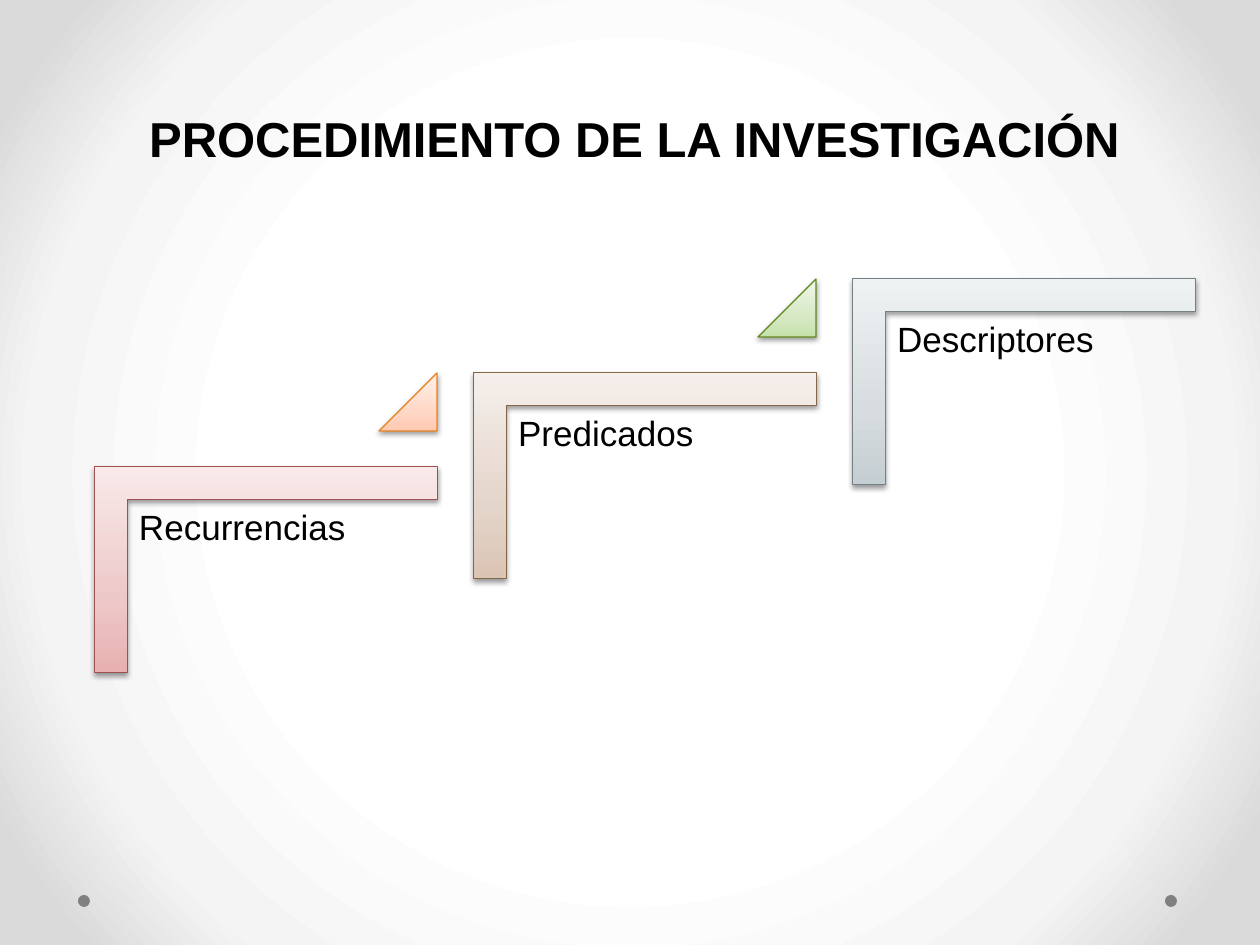
"""Build the slide showing the three rising steps of the research procedure."""
from pptx import Presentation
from pptx.dml.color import RGBColor as RGB
from pptx.enum.shapes import MSO_SHAPE as SHAPE
from pptx.enum.text import MSO_ANCHOR as ANCHOR, PP_ALIGN as ALIGN
from pptx.oxml import parse_xml
from pptx.oxml.ns import nsdecls, qn
from pptx.util import Emu, Pt

COLORS = {
    "text": "000000", "dot": "808080",
    "backdrop": [(50, "FFFFFF"), (76, "F4F4F4"), (92, "DADADA")],
    "corners": [
        ("9C5252", "E8B0B0", "EDC8C8", "F9E9E9"),
        ("846648", "DAC4B4", "E4D5CB", "F5EFEB"),
        ("758085", "C5CED2", "D6DCDF", "EFF2F3"),
    ],
    "triangles": [
        ("E68422", "FFC9B1", "FFD8C8", "FFF0EA"),
        ("63891F", "C5E1AB", "D6E9C5", "EFF7E9"),
    ],
}
LABELS = ["Recurrencias", "Predicados", "Descriptores"]
STEP_X, STEP_Y = 379, -94
SHADOW = (
    f'<a:outerShdw {nsdecls("a")} blurRad="39370" dist="20320" dir="5400000" '
    'rotWithShape="0"><a:srgbClr val="000000"><a:alpha val="38000"/>'
    '</a:srgbClr></a:outerShdw>'
)


def px(*values):
    return [Emu(round(v * 914400 / 126)) for v in values]


def set_gradient(props, stops, direction):
    gs = "".join(
        f'<a:gs pos="{pos * 1000}"><a:srgbClr val="{color}"/></a:gs>'
        for pos, color in stops
    )
    grad = parse_xml(
        f'<a:gradFill {nsdecls("a")} rotWithShape="0">'
        f'<a:gsLst>{gs}</a:gsLst>{direction}</a:gradFill>'
    )
    props.replace(props.find(qn("a:solidFill")), grad)


prs = Presentation()
prs.slide_width, prs.slide_height = px(1260, 945)
s = prs.slides.add_slide(prs.slide_layouts[5])

s.background.fill.solid()
set_gradient(
    s.element.find(".//" + qn("p:bgPr")), COLORS["backdrop"],
    '<a:path path="circle"><a:fillToRect l="50000" t="50000" r="50000" b="50000"/></a:path>',
)

for x in (1165, 78):
    dot = s.shapes.add_shape(SHAPE.OVAL, *px(x, 895, 12, 12))
    dot.shadow.inherit = False
    dot.fill.solid()
    dot.fill.fore_color.rgb = RGB.from_string(COLORS["dot"])
    dot.line.fill.background()

title = s.shapes.title
title.left, title.top, title.width, title.height = px(94, 16, 1081, 158)
tf = title.text_frame
tf.word_wrap = True
tf.vertical_anchor = ANCHOR.BOTTOM
p = tf.paragraphs[0]
p.alignment = ALIGN.CENTER
p.line_spacing = Pt(58)
r = p.add_run()
r.text = "PROCEDIMIENTO DE LA INVESTIGACIÓN"
r.font.name, r.font.size, r.font.bold = "Arial", Pt(28), True
r.font.color.rgb = RGB.from_string(COLORS["text"])

stairs = s.shapes.add_group_shape()
for i, label in enumerate(LABELS):
    dx, dy = i * STEP_X, i * STEP_Y
    corner = stairs.shapes.add_shape(SHAPE.CORNER, *px(163 + dx, 398 + dy, 206, 343))
    corner.rotation = 90
    corner.adjustments[0] = corner.adjustments[1] = 0.16
    parts = [(corner, COLORS["corners"][i])]

    box = stairs.shapes.add_textbox(*px(129 + dx, 500 + dy, 309, 271))
    tf = box.text_frame
    tf.word_wrap = True
    tf.margin_left, tf.margin_top, tf.margin_right, tf.margin_bottom = px(10, 10, 10, 10)
    p = tf.paragraphs[0]
    p.line_spacing = 0.9
    p.space_after = Pt(7)
    r = p.add_run()
    r.text = label
    r.font.name, r.font.size = "Arial", Pt(20)
    r.font.color.rgb = RGB.from_string(COLORS["text"])

    if i < len(COLORS["triangles"]):
        triangle = stairs.shapes.add_shape(
            SHAPE.ISOSCELES_TRIANGLE, *px(379 + dx, 373 + dy, 58, 58))
        triangle.adjustments[0] = 1
        parts.append((triangle, COLORS["triangles"][i]))

    for sp, (outline, *shades) in parts:
        sp.line.color.rgb = RGB.from_string(outline)
        sp.line.width = Pt(0.75)
        sp.fill.solid()
        props = sp.element.spPr
        set_gradient(props, zip((0, 35, 100), shades), '<a:lin ang="16200000" scaled="0"/>')
        sp.shadow.inherit = False
        props.find(qn("a:effectLst")).append(parse_xml(SHADOW))

prs.save("out.pptx")
